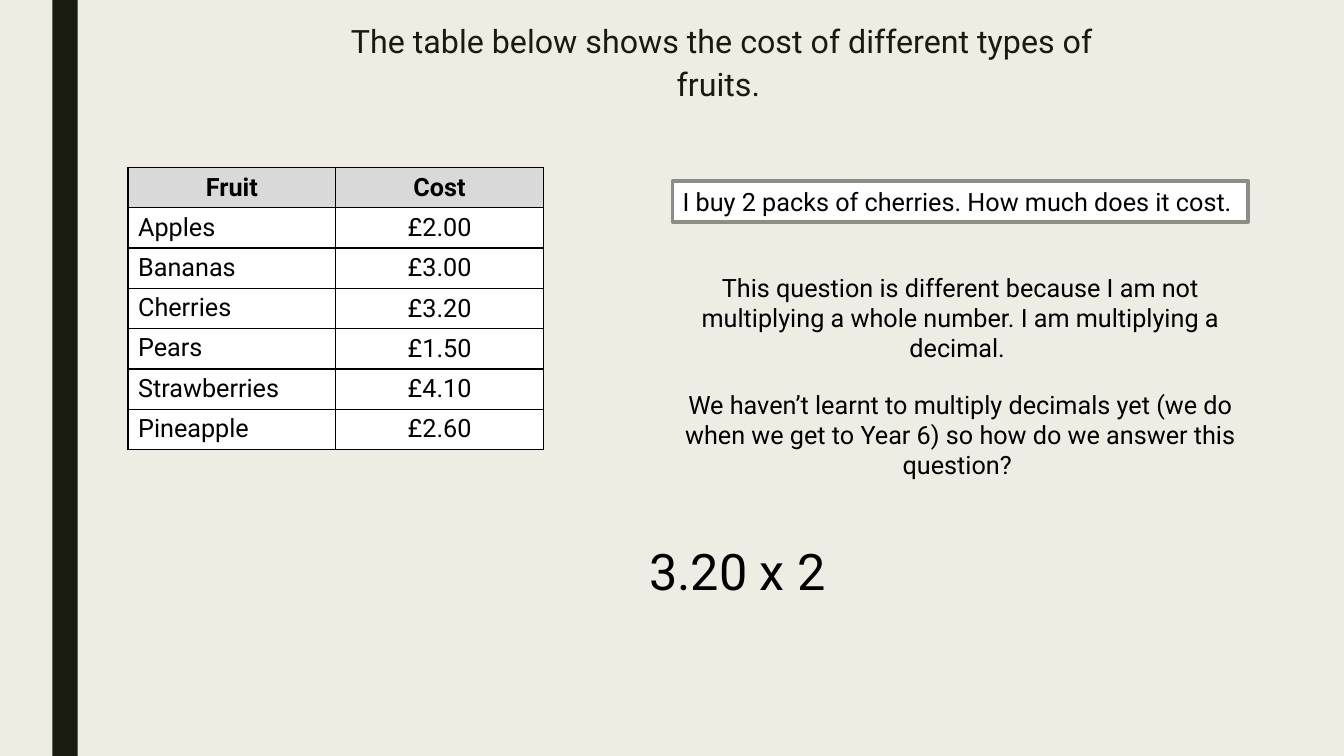
from lxml.etree import SubElement
from pptx import Presentation
from pptx.dml.color import RGBColor
from pptx.enum.shapes import MSO_SHAPE as Shape
from pptx.enum.text import MSO_ANCHOR as Anchor, MSO_AUTO_SIZE as AutoSize, PP_ALIGN as Align
from pptx.oxml.ns import qn
from pptx.util import Inches, Pt

FONT = "Roboto"
COLORS = {
    "background": "EFEDE3",
    "dark": "191B0E",
    "text": "000000",
    "header": "D9D9D9",
    "white": "FFFFFF",
    "frame": "8C8D86",
}

TITLE = "The table below shows the cost of different types of fruits. "
PRICES = [
    ("Fruit", "Cost"),
    ("Apples", "£2.00"),
    ("Bananas", "£3.00"),
    ("Cherries", "£3.20"),
    ("Pears", "£1.50"),
    ("Strawberries", "£4.10"),
    ("Pineapple", "£2.60"),
]
QUESTION = "I buy 2 packs of cherries. How much does it cost. "
# text, left, top, height, size
NOTES = [
    ("This question is different because I am not multiplying a whole number. "
     "I am multiplying a decimal. ", 6.67, 2.65, 1.01, 18),
    ("We haven’t learnt to multiply decimals yet (we do when we get to Year 6) "
     "so how do we answer this question? ", 6.67, 3.81, 1.01, 18),
    ("3.20 x 2", 4.46, 5.31, 0.71, 36),
]
NOTE_WIDTH = 5.71
COLUMN_WIDTH, ROW_HEIGHT = 2.06, 0.4


def color(name):
    return RGBColor.from_string(COLORS[name])


def paint(fill, name):
    fill.solid()
    fill.fore_color.rgb = color(name)


def write(frame, text, size=18, align=Align.CENTER, bold=False, ink="text"):
    frame.word_wrap = True
    paragraph = frame.paragraphs[0]
    paragraph.text = text
    paragraph.alignment = align
    font = paragraph.font
    font.name, font.size, font.bold = FONT, Pt(size), bold
    font.color.rgb = color(ink)
    return paragraph


def add_borders(cell):
    """Draw a thin line on all four sides; borders must precede the fill."""
    properties = cell._tc.get_or_add_tcPr()
    for side in ("lnL", "lnR", "lnT", "lnB"):
        line = SubElement(properties, qn(f"a:{side}"), w=str(Pt(1)))
        fill = SubElement(line, qn("a:solidFill"))
        SubElement(fill, qn("a:srgbClr"), val=COLORS["text"])


def add_box(slide, left, top, width, height, fill):
    box = slide.shapes.add_shape(
        Shape.RECTANGLE, Inches(left), Inches(top), Inches(width), Inches(height))
    box.shadow.inherit = False
    paint(box.fill, fill)
    box.line.fill.background()
    return box


def add_title(slide):
    title = slide.shapes.title
    title.left, title.top = Inches(2.99), Inches(0.29)
    title.width, title.height = Inches(8.35), Inches(0.61)
    title.text_frame.auto_size = AutoSize.NONE
    title.text_frame.vertical_anchor = Anchor.MIDDLE
    write(title.text_frame, TITLE, size=23, ink="dark").line_spacing = 1.12


def add_price_table(slide):
    rows, columns = len(PRICES), len(PRICES[0])
    table = slide.shapes.add_table(
        rows, columns, Inches(1.27), Inches(1.66),
        Inches(columns * COLUMN_WIDTH), Inches(rows * ROW_HEIGHT)).table
    for column in table.columns:
        column.width = Inches(COLUMN_WIDTH)
    for r, entries in enumerate(PRICES):
        table.rows[r].height = Inches(ROW_HEIGHT)
        is_header = r == 0
        for c, entry in enumerate(entries):
            cell = table.cell(r, c)
            is_fruit = c == 0 and not is_header
            add_borders(cell)
            paint(cell.fill, "header" if is_header else "white")
            cell.vertical_anchor = Anchor.TOP if is_fruit else Anchor.MIDDLE
            write(cell.text_frame, entry, bold=is_header,
                  align=Align.LEFT if is_fruit else Align.CENTER)


def add_question(slide):
    question = add_box(slide, 6.67, 1.8, NOTE_WIDTH, 0.4, "white")
    question.line.color.rgb = color("frame")
    question.line.width = Pt(2.75)
    question.text_frame.vertical_anchor = Anchor.TOP
    question.text_frame.auto_size = AutoSize.SHAPE_TO_FIT_TEXT
    write(question.text_frame, QUESTION)


def add_notes(slide):
    for text, left, top, height, size in NOTES:
        note = slide.shapes.add_textbox(
            Inches(left), Inches(top), Inches(NOTE_WIDTH), Inches(height))
        note.text_frame.auto_size = AutoSize.SHAPE_TO_FIT_TEXT
        write(note.text_frame, text, size)


def main():
    deck = Presentation()
    deck.slide_width, deck.slide_height = Inches(13.33), Inches(7.5)
    slide = deck.slides.add_slide(deck.slide_layouts[5])
    paint(slide.background.fill, "background")
    add_box(slide, 0.52, 0, 0.25, 7.5, "dark")
    add_title(slide)
    add_price_table(slide)
    add_question(slide)
    add_notes(slide)
    deck.save("out.pptx")


if __name__ == "__main__":
    main()
